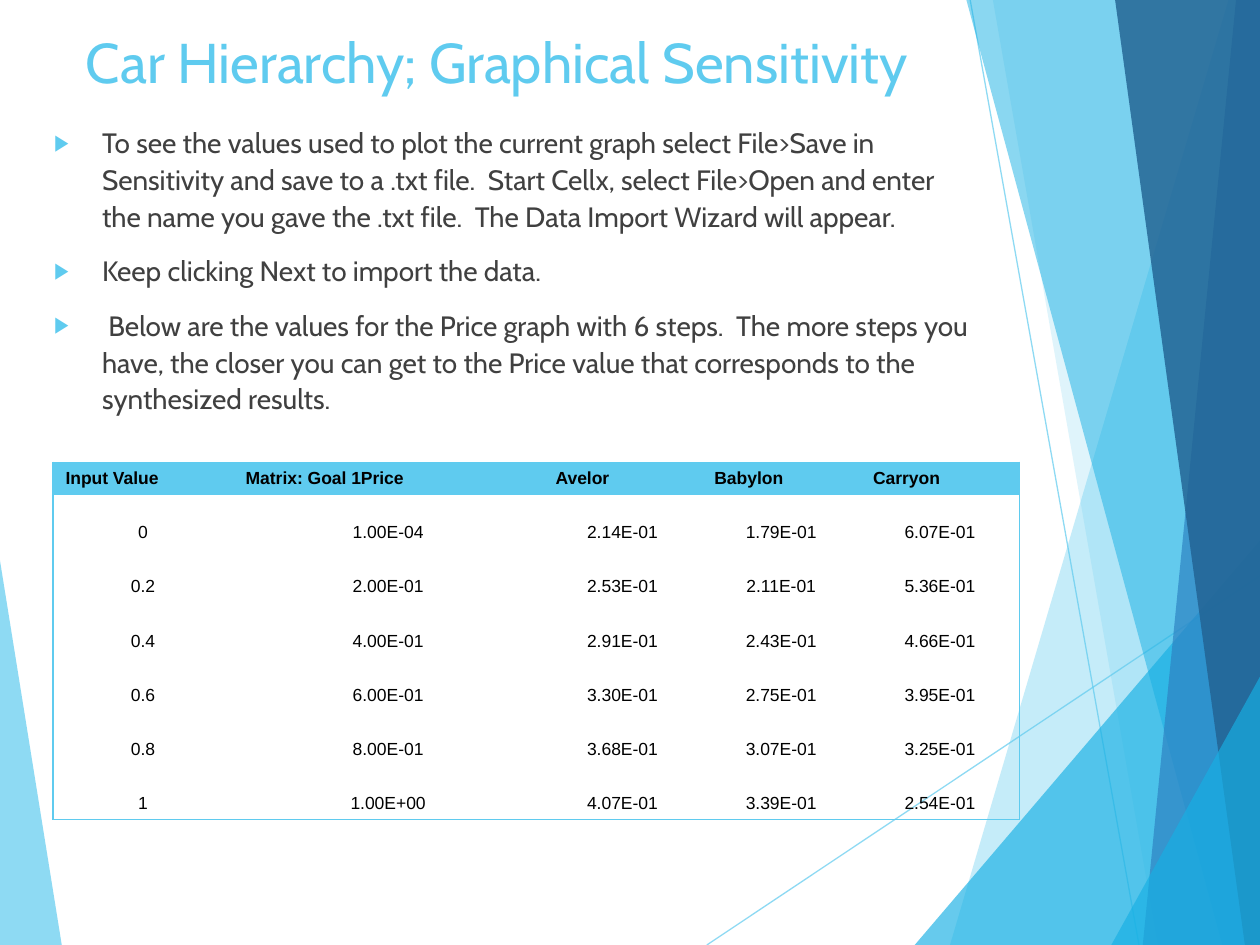
from lxml.etree import SubElement
from pptx import Presentation
from pptx.dml.color import RGBColor
from pptx.enum.shapes import MSO_CONNECTOR
from pptx.enum.text import MSO_ANCHOR, MSO_AUTO_SIZE, PP_ALIGN
from pptx.oxml.ns import qn
from pptx.util import Inches, Pt

COLORS = {"sky": "5FCBEF", "cyan": "17B0E4", "blue": "2E83C3",
          "navy": "226292", "text": "404040", "black": "000000"}
W, H = 10, 7.5

TITLE = "Car Hierarchy; Graphical Sensitivity"
BULLETS = [
    "To see the values used to plot the current graph select File>Save in Sensitivity and save to a .txt file.  Start Cellx, select File>Open and enter the name you gave the .txt file.  The Data Import Wizard will appear.",
    "Keep clicking Next to import the data.",
    " Below are the values for the Price graph with 6 steps.  The more steps you have, the closer you can get to the Price value that corresponds to the synthesized results.",
]
TABLE = [
    ("Input Value", "Matrix: Goal 1Price", "Avelor", "Babylon", "Carryon"),
    ("0", "1.00E-04", "2.14E-01", "1.79E-01", "6.07E-01"),
    ("0.2", "2.00E-01", "2.53E-01", "2.11E-01", "5.36E-01"),
    ("0.4", "4.00E-01", "2.91E-01", "2.43E-01", "4.66E-01"),
    ("0.6", "6.00E-01", "3.30E-01", "2.75E-01", "3.95E-01"),
    ("0.8", "8.00E-01", "3.68E-01", "3.07E-01", "3.25E-01"),
    ("1", "1.00E+00", "4.07E-01", "3.39E-01", "2.54E-01"),
]
COL_WIDTHS = [1.43, 2.46, 1.26, 1.26, 1.26]
ROW_HEIGHTS = [0.25] + [0.43] * 6

LEFT_WEDGE = ("sky", 70, [(0, 4.45), (0.49, H), (0, H)])
RAYS = [((5.61, H), (W, 4.57)), ((7.7, 0), (9.04, H))]
FACETS = [
    ("sky", 36, [(9.75, 0), (7.54, H), (W, H), (W, 0)]),
    ("sky", 20, [(7.88, 0), (9.19, H), (W, H), (W, 0)]),
    ("cyan", 66, [(7.26, H), (W, 4.29), (W, H)]),
    ("cyan", 50, [(7.67, 0), (9.7, H), (W, H), (W, 0)]),
    ("blue", 70, [(9.81, 0), (9.07, H), (W, H), (W, 0)]),
    ("navy", 82, [(8.85, 0), (9.88, H), (W, H), (W, 0)]),
    ("cyan", 66, [(8.82, H), (W, 5.37), (W, H)]),
]
TITLE_FONT = {"name": "Cabin", "size": Pt(32), "bold": False}
BODY_FONT = {"name": "Cabin", "size": Pt(16)}
CELL_FONT = {"name": "Arial", "size": Pt(10)}
FRAME = {"word_wrap": True, "auto_size": MSO_AUTO_SIZE.NONE,
         "vertical_anchor": MSO_ANCHOR.TOP}
HANG = Inches(0.38)


def rgb(name):
    return RGBColor.from_string(COLORS[name])


def set_all(target, values):
    for key, value in values.items():
        setattr(target, key, value)


def write(p, text, font, color):
    r = p.add_run()
    r.text = text
    set_all(r.font, font)
    r.font.color.rgb = rgb(color)


def place(sp, *box):
    set_all(sp, dict(zip(("left", "top", "width", "height"), map(Inches, box))))
    set_all(sp.text_frame, FRAME)


def hang(p):
    p_pr = p._p.get_or_add_pPr()
    p_pr.set("marL", str(HANG))
    p_pr.set("indent", str(-HANG))
    return p_pr


def fade(sp, alpha):
    for clr in sp._element.spPr.iter(qn("a:srgbClr")):
        SubElement(clr, qn("a:alpha")).set("val", str(alpha * 1000))


def add_facet(s, color, alpha, points):
    start, *rest = [(Inches(x), Inches(y)) for x, y in points]
    builder = s.shapes.build_freeform(*start)
    builder.add_line_segments(rest, close=True)
    sp = builder.convert_to_shape()
    sp.shadow.inherit = False
    sp.fill.solid()
    sp.fill.fore_color.rgb = rgb(color)
    sp.line.fill.background()
    fade(sp, alpha)


def add_ray(s, start, end):
    ray = s.shapes.add_connector(MSO_CONNECTOR.STRAIGHT, *map(Inches, start + end))
    ray.line.color.rgb = rgb("sky")
    ray.line.width = Pt(0.75)
    fade(ray, 70)
    SubElement(ray._element.spPr, qn("a:effectLst"))


def add_bullet(p, text):
    set_all(p, {"line_spacing": 1.1, "space_before": Pt(10), "space_after": Pt(0)})
    p_pr = hang(p)
    SubElement(SubElement(p_pr, qn("a:buClr")), qn("a:srgbClr")).set("val", COLORS["sky"])
    SubElement(p_pr, qn("a:buSzPct")).set("val", "80000")
    SubElement(p_pr, qn("a:buFont")).set("typeface", "Arial")
    SubElement(p_pr, qn("a:buChar")).set("char", "▶")
    write(p, text, BODY_FONT, "text")


def add_border(cell, side):
    ln = SubElement(cell._tc.get_or_add_tcPr(), qn("a:ln" + side))
    ln.set("w", str(Pt(1)))
    SubElement(SubElement(ln, qn("a:solidFill")), qn("a:srgbClr")).set("val", COLORS["sky"])


def add_values(s):
    rows, cols = len(TABLE), len(COL_WIDTHS)
    box = map(Inches, (0.42, 3.67, sum(COL_WIDTHS), sum(ROW_HEIGHTS)))
    table = s.shapes.add_table(rows, cols, *box).table
    set_all(table, {"first_row": False, "horz_banding": False})
    table._tbl.tblPr.find(qn("a:tableStyleId")).text = "{2D5ABB26-0587-4C30-8999-92F81FD0307C}"
    for col, width in zip(table.columns, COL_WIDTHS):
        col.width = Inches(width)
    for row, height in zip(table.rows, ROW_HEIGHTS):
        row.height = Inches(height)
    for i, values in enumerate(TABLE):
        for j, value in enumerate(values):
            cell = table.cell(i, j)
            cell.vertical_anchor = MSO_ANCHOR.BOTTOM
            edges = {"L": j == 0, "R": j == cols - 1, "T": i == 0, "B": i == rows - 1}
            for side, outer in edges.items():
                if outer:
                    add_border(cell, side)
            if i == 0:
                cell.fill.solid()
                cell.fill.fore_color.rgb = rgb("sky")
            else:
                cell.fill.background()
            p = cell.text_frame.paragraphs[0]
            p.alignment = PP_ALIGN.CENTER if i else PP_ALIGN.LEFT
            hang(p)
            write(p, value, {**CELL_FONT, "bold": i == 0}, "black")


def main():
    prs = Presentation()
    set_all(prs, {"slide_width": Inches(W), "slide_height": Inches(H)})
    s = prs.slides.add_slide(prs.slide_layouts[1])
    title, body = s.placeholders

    add_facet(s, *LEFT_WEDGE)
    for start, end in RAYS:
        add_ray(s, start, end)
    for facet in FACETS:
        add_facet(s, *facet)

    for sp in (title, body):
        s.shapes._spTree.append(sp._element)
    place(title, 0.58, 0.17, 9, 1.25)
    p = title.text_frame.paragraphs[0]
    p.alignment = PP_ALIGN.LEFT
    write(p, TITLE, TITLE_FONT, "sky")

    place(body, 0.33, 0.92, 7.5, 2.25)
    tf = body.text_frame
    for i, text in enumerate(BULLETS):
        add_bullet(tf.add_paragraph() if i else tf.paragraphs[0], text)

    add_values(s)
    prs.save("out.pptx")


if __name__ == "__main__":
    main()
